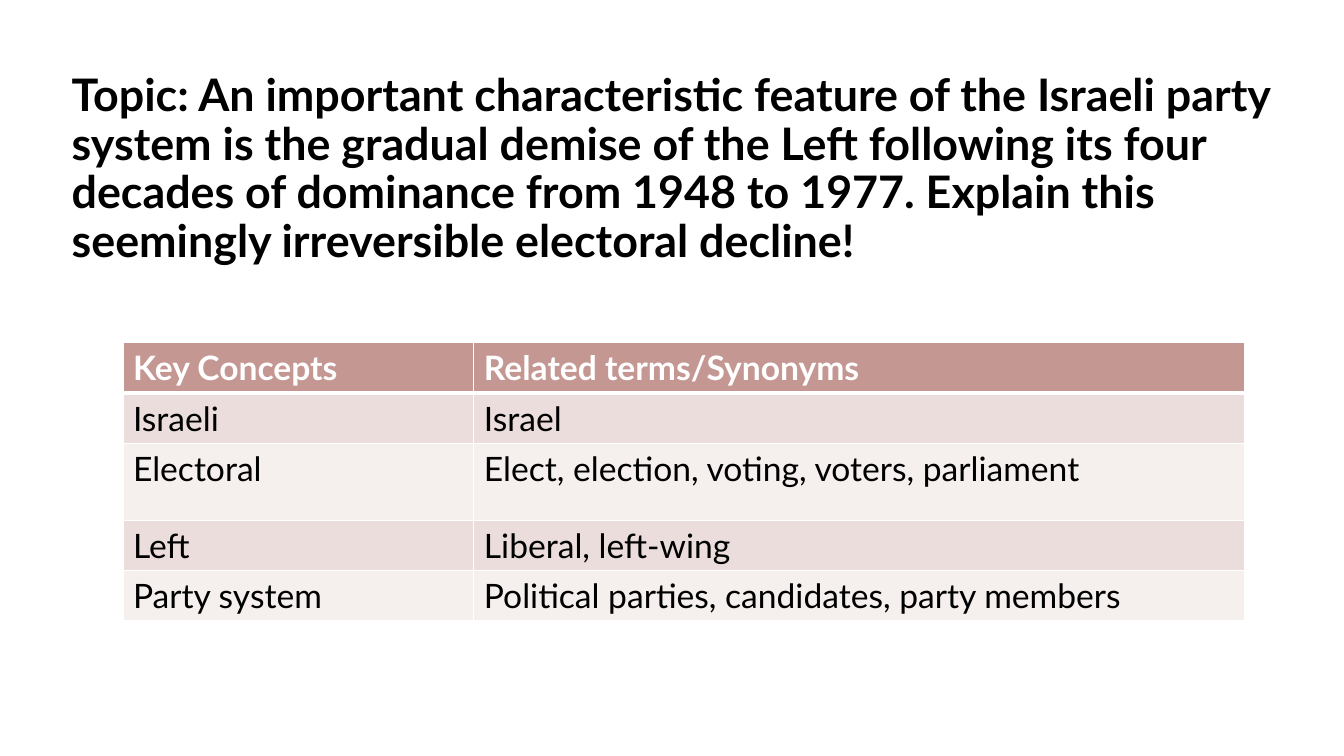
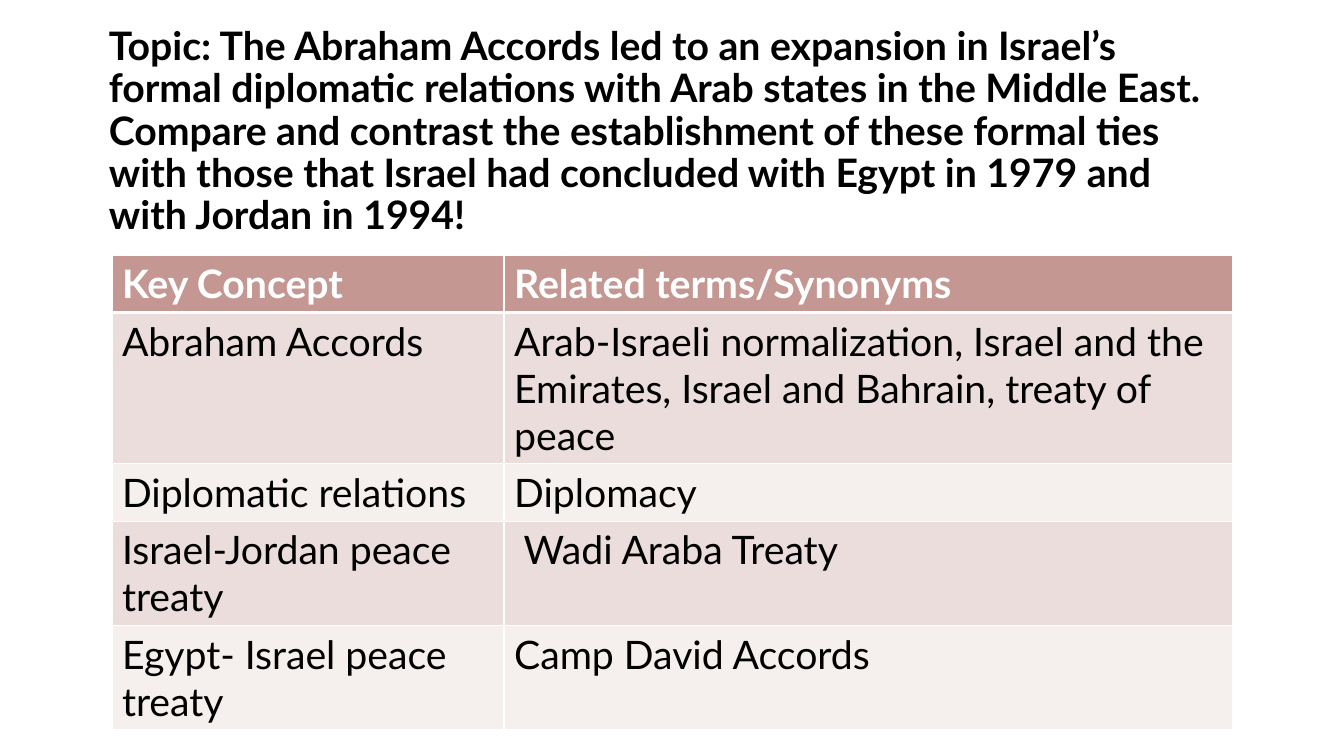
import lxml.etree
import pptx
import pptx.dml.color
import pptx.enum.text
import pptx.oxml.ns
import pptx.util


def color(hex_string):
    """Turn a hex string into a colour."""
    return pptx.dml.color.RGBColor.from_string(hex_string)


def apply_format(target, values):
    """Set each attribute named in the dict."""
    for name, value in values.items():
        setattr(target, name, value)


class Deck:
    """Hold the shared style and the current slide, on a 100 by 100 grid."""

    FONT = "Lato"
    INK = "000000"
    LIGHT = "FFFFFF"
    HEADER = "C49792"
    BANDS = ("EADDDC", "F5EFEE")
    TITLE_FRAME = {
        "word_wrap": True,
        "auto_size": pptx.enum.text.MSO_AUTO_SIZE.NONE,
        "vertical_anchor": pptx.enum.text.MSO_ANCHOR.MIDDLE,
    }
    TITLE_PARAGRAPH = {
        "alignment": pptx.enum.text.PP_ALIGN.LEFT,
        "line_spacing": 0.9,
    }

    def __init__(self):
        """Start a widescreen presentation."""
        self.presentation = pptx.Presentation()
        size = {
            "slide_width": pptx.util.Inches(13.33),
            "slide_height": pptx.util.Inches(7.5),
        }
        apply_format(self.presentation, size)
        self.slide = None

    def columns(self, count):
        """Return the width of a number of grid columns."""
        return round(self.presentation.slide_width * count / 100)

    def rows(self, count):
        """Return the height of a number of grid rows."""
        return round(self.presentation.slide_height * count / 100)

    def add_slide(self):
        """Add a slide that has only a title placeholder."""
        layout = self.presentation.slide_layouts[5]
        self.slide = self.presentation.slides.add_slide(layout)

    def add_text(self, paragraph, text, size, ink, bold):
        """Add one formatted run."""
        run = paragraph.add_run()
        run.text = text
        values = {"name": self.FONT, "size": pptx.util.Pt(size), "bold": bold}
        apply_format(run.font, values)
        run.font.color.rgb = color(ink)

    def title(self, text, left, top, width, height, size):
        """Place and fill the title placeholder."""
        shape = self.slide.shapes.title
        box = {
            "left": self.columns(left),
            "top": self.rows(top),
            "width": self.columns(width),
            "height": self.rows(height),
        }
        apply_format(shape, box)
        apply_format(shape.text_frame, self.TITLE_FRAME)
        paragraph = shape.text_frame.paragraphs[0]
        apply_format(paragraph, self.TITLE_PARAGRAPH)
        self.add_text(paragraph, text, size, self.INK, True)

    def borders(self, cell, top, bottom):
        """Draw the four light borders of a cell."""
        properties = cell._tc.get_or_add_tcPr()
        qualified = pptx.oxml.ns.qn
        for side, points in (("L", 1), ("R", 1), ("T", top), ("B", bottom)):
            line = lxml.etree.SubElement(
                properties, qualified(f"a:ln{side}"), w=str(pptx.util.Pt(points))
            )
            fill = lxml.etree.SubElement(line, qualified("a:solidFill"))
            lxml.etree.SubElement(fill, qualified("a:srgbClr"), val=self.LIGHT)

    def table(self, records, left, top, widths, heights, size):
        """Add a table with a header row and banded body rows."""
        table = self.slide.shapes.add_table(
            len(heights), len(widths), self.columns(left), self.rows(top),
            self.columns(sum(widths)), self.rows(sum(heights)),
        ).table
        for column, width in zip(table.columns, widths):
            column.width = self.columns(width)
        for index, (record, height) in enumerate(zip(records, heights)):
            table.rows[index].height = self.rows(height)
            header = index == 0
            background = self.HEADER if header else self.BANDS[(index - 1) % 2]
            ink = self.LIGHT if header else self.INK
            for cell, text in zip(table.rows[index].cells, record):
                self.borders(cell, 3 if index == 1 else 1, 3 if header else 1)
                cell.fill.solid()
                cell.fill.fore_color.rgb = color(background)
                paragraph = cell.text_frame.paragraphs[0]
                self.add_text(paragraph, text, size, ink, header)


def main():
    """Build both topic slides and save them."""
    deck = Deck()

    deck.add_slide()
    deck.title(
        "Topic: An important characteristic feature of the Israeli party system "
        "is the gradual demise of the Left following its four decades of "
        "dominance from 1948 to 1977. Explain this seemingly irreversible "
        "electoral decline!",
        4.58, 13.87, 92.57, 17.2, 32,
    )
    electoral_terms = [
        ("Key Concepts", "Related terms/Synonyms"),
        ("Israeli", "Israel"),
        ("Electoral", "Elect, election, voting, voters, parliament"),
        ("Left", "Liberal, left-wing"),
        ("Party system", "Political parties, candidates, party members"),
    ]
    deck.table(
        electoral_terms, 9.15, 45.33, (26.11, 57.31),
        (6.67, 6.67, 10.13, 6.67, 6.67), 24,
    )

    deck.add_slide()
    deck.title(
        "Topic: The Abraham Accords led to an expansion in Israel’s formal "
        "diplomatic relations with Arab states in the Middle East. Compare and "
        "contrast the establishment of these formal ties with those that Israel "
        "had concluded with Egypt in 1979 and with Jordan in 1994!",
        7.35, 8.93, 83.42, 17.2, 28,
    )
    treaty_terms = [
        ("Key Concept", "Related terms/Synonyms"),
        (
            "Abraham Accords",
            "Arab-Israeli normalization, Israel and the Emirates, "
            "Israel and Bahrain, treaty of peace",
        ),
        ("Diplomatic relations", "Diplomacy"),
        ("Israel-Jordan peace treaty", " Wadi Araba Treaty"),
        ("Egypt- Israel peace treaty", "Camp David Accords"),
    ]
    deck.table(
        treaty_terms, 8.33, 33.73, (29.18, 54.24),
        (7.6, 20, 7.6, 13.78, 13.78), 28,
    )

    deck.presentation.save("out.pptx")


if __name__ == "__main__":
    main()
